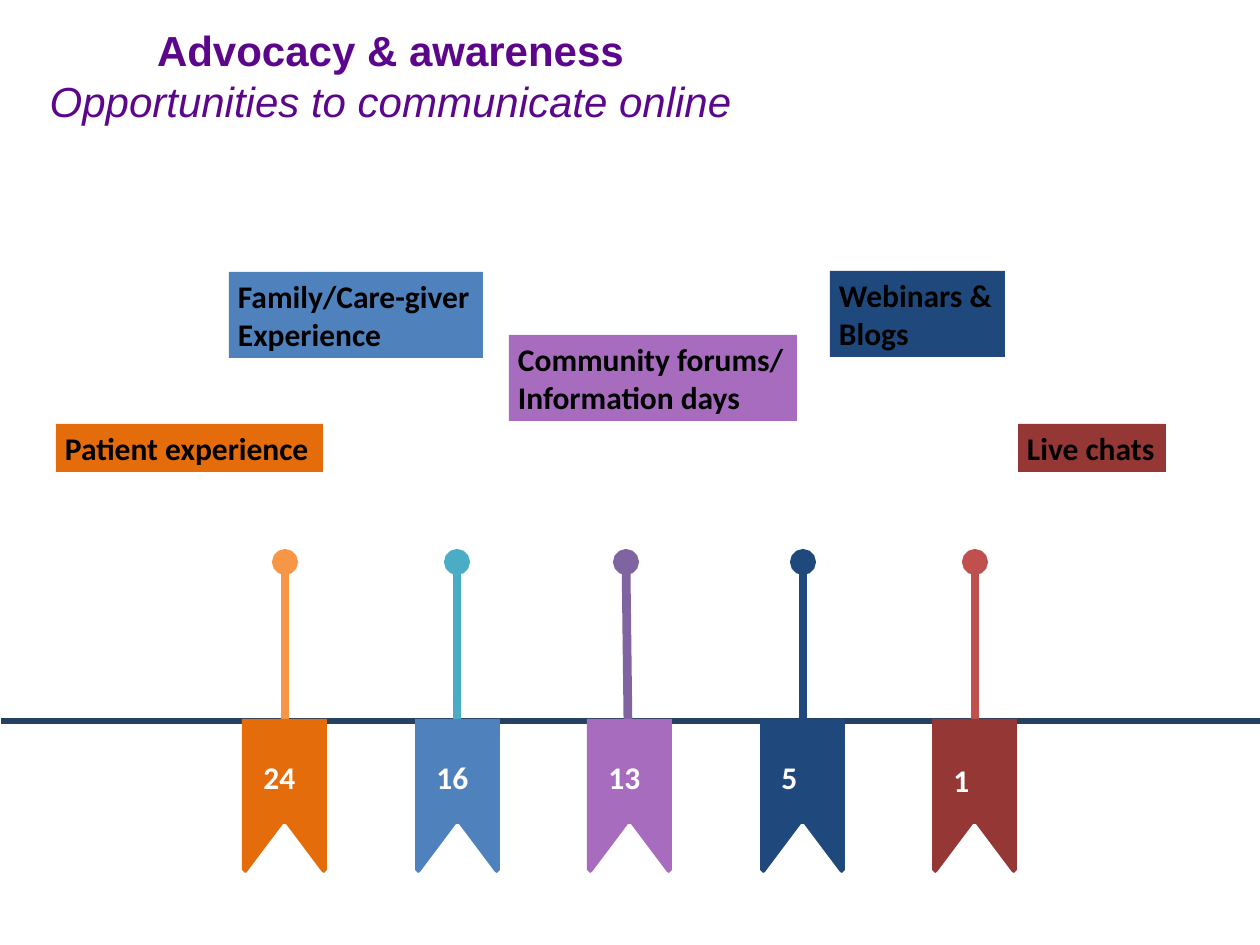
"""Build the slide on online advocacy and awareness."""
from lxml.etree import SubElement
from pptx import Presentation
from pptx.dml.color import RGBColor
from pptx.enum.shapes import MSO_CONNECTOR
from pptx.enum.text import MSO_ANCHOR, MSO_AUTO_SIZE, PP_ALIGN
from pptx.oxml.ns import qn
from pptx.util import Pt

PX = 914400 / 126


def draw_line(ends, hue, width):
    line = slide.shapes.add_connector(
        MSO_CONNECTOR.STRAIGHT, *[round(n * PX) for n in ends])
    line.line.color.rgb = RGBColor.from_string(hue)
    line.line.width = Pt(width)
    SubElement(line._element.spPr, qn("a:effectLst"))
    return line


def add_box(shapes, place, text, fill, hue):
    box = shapes.add_textbox(*[round(n * PX) for n in place])
    box.fill.solid()
    box.fill.fore_color.rgb = RGBColor.from_string(fill)
    frame = box.text_frame
    frame.word_wrap = False
    frame.auto_size = MSO_AUTO_SIZE.SHAPE_TO_FIT_TEXT
    frame.text = text
    for para in frame.paragraphs:
        font = para.runs[0].font
        font.name, font.size, font.bold = "Calibri", Pt(18), True
        font.color.rgb = RGBColor.from_string(hue)
    return frame


deck = Presentation()
deck.slide_width, deck.slide_height = round(1260 * PX), round(945 * PX)
slide = deck.slides.add_slide(deck.slide_layouts[5])

title = slide.shapes.title
title.left, title.top = round(13 * PX), round(10 * PX)
title.width, title.height = round(755 * PX), round(130 * PX)
frame = title.text_frame
frame.text = "Advocacy & awareness\vOpportunities to communicate online"
frame.auto_size = MSO_AUTO_SIZE.NONE
frame.vertical_anchor = MSO_ANCHOR.MIDDLE
head = frame.paragraphs[0]
head.alignment = PP_ALIGN.CENTER
for run, bold in zip(head.runs, (True, False)):
    font = run.font
    font.name, font.size = "Arial", Pt(24)
    font.bold, font.italic = bold, not bold
    font.color.rgb = RGBColor.from_string("5C068C")

draw_line((1, 721, 1261, 721), "254061", 3)

topics = [
    ("Patient experience", (56, 424, 267, 48), "24", "E46C0A", "F79646"),
    ("Family/Care-giver\nExperience", (229, 272, 254, 86), "16", "4F81BD", "4BACC6"),
    ("Community forums/\nInformation days", (509, 335, 288, 86), "13", "A86CBF", "8064A2"),
    ("Webinars &\nBlogs", (830, 271, 175, 86), "5", "1F497D", "1F497D"),
    ("Live chats", (1018, 424, 148, 48), "1", "953735", "C0504D"),
]
feet = [(285, 741), (457, 719), (629, 805), (803, 824), (975, 721)]
tops = [285, 457, 626, 803, 975]
outline = [(0, 0), (85, 0), (85, 151), (82, 154), (80, 153), (44, 105),
           (41, 105), (5, 153), (3, 154), (0, 151)]

for i, (name, place, count, fill, hue) in enumerate(topics):
    pin = draw_line((*feet[i], tops[i], 562), hue, 5)
    SubElement(pin.line._get_or_add_ln(), qn("a:tailEnd"), type="oval")

    label = add_box(slide.shapes, place, name, fill, "000000")
    label.margin_left = label.margin_right = round(9 * PX)
    label.margin_top = label.margin_bottom = round(5 * PX)

    left = 242 + round(172.6 * i)
    group = slide.shapes.add_group_shape().shapes
    points = [(left + x, 719 + y) for x, y in outline]
    build = group.build_freeform(*points[0], scale=PX)
    build.add_line_segments(points[1:])
    flag = build.convert_to_shape()
    flag.shadow.inherit = False
    flag.fill.solid()
    flag.fill.fore_color.rgb = RGBColor.from_string(fill)
    flag.line.fill.background()
    spot = (left + 9, 755 if count == "1" else 752, 29 + 15 * len(count), 51)
    add_box(group, spot, count, fill, "FFFFFF")

deck.save("out.pptx")
